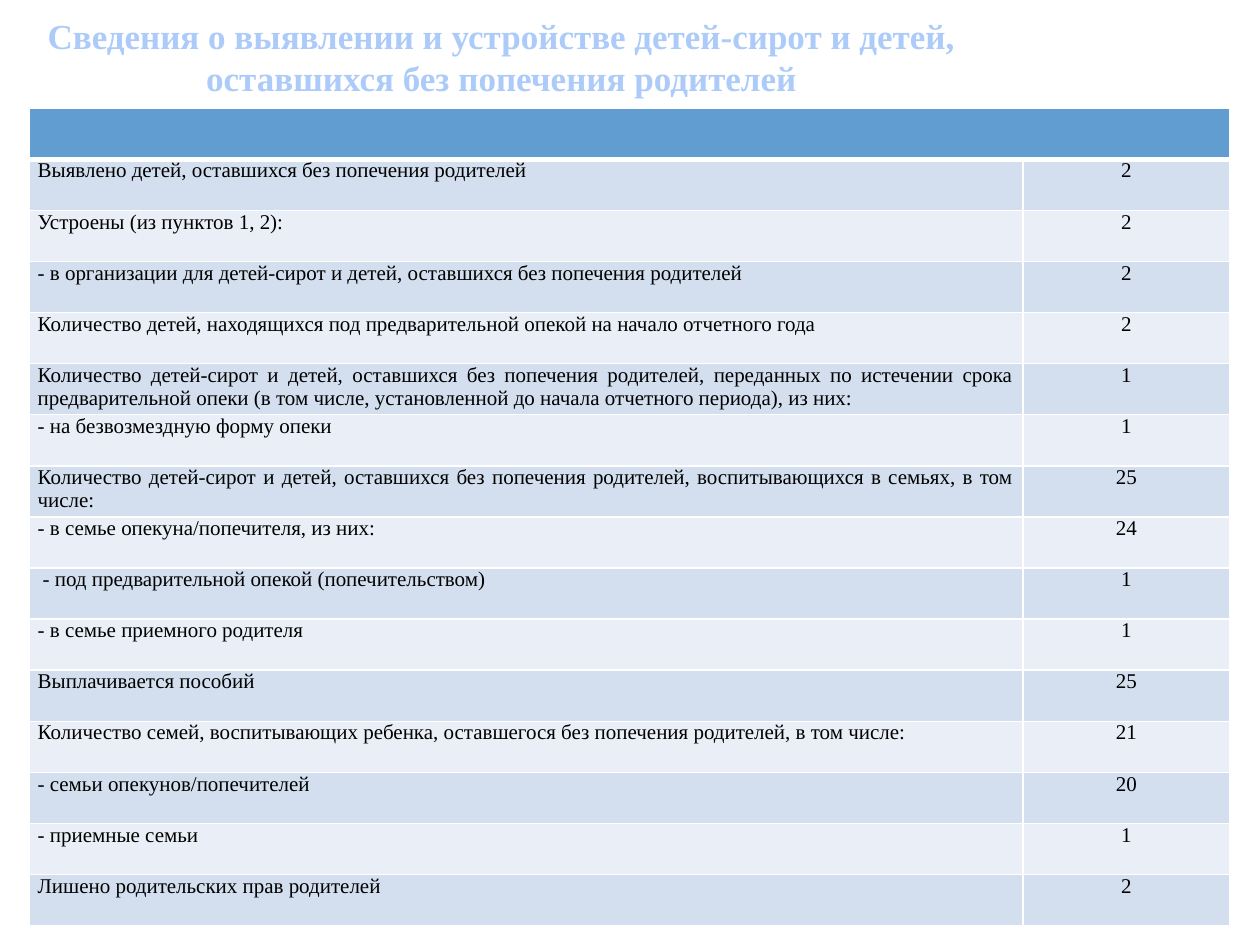
from dataclasses import dataclass

from lxml.etree import SubElement
from pptx import Presentation
from pptx.dml.color import RGBColor
from pptx.enum.text import MSO_ANCHOR, MSO_AUTO_SIZE, PP_ALIGN
from pptx.oxml.ns import qn
from pptx.util import Cm, Pt


@dataclass(frozen=True)
class Theme:
    font: str = "Times New Roman"
    title_size: float = 20
    body_size: float = 12
    title: str = "ACCBF9"
    text: str = "000000"
    header: str = "629DD1"
    bands: tuple = ("D3DFEE", "EAEFF7")
    border: str = "FFFFFF"


THEME = Theme()

TITLE = "Сведения о выявлении и устройстве детей-сирот и детей, оставшихся без попечения родителей"

# Label, number of children or families, extra indent in cm
ROWS = [
    ("Выявлено детей, оставшихся без попечения родителей", 2, 0),
    ("Устроены (из пунктов 1, 2):", 2, 0),
    ("- в организации для детей-сирот и детей, оставшихся без попечения родителей", 2, 0),
    ("Количество детей, находящихся под предварительной опекой на начало отчетного года", 2, 0),
    ("Количество детей-сирот и детей, оставшихся без попечения родителей, переданных "
     "по истечении срока предварительной опеки (в том числе, установленной до начала "
     "отчетного периода), из них:", 1, 0),
    ("- на безвозмездную форму опеки", 1, 0),
    ("Количество детей-сирот и детей, оставшихся без попечения родителей, "
     "воспитывающихся в семьях, в том числе:", 25, 0),
    ("- в семье опекуна/попечителя, из них:", 24, 0),
    ("- под предварительной опекой (попечительством)", 1, 0.1),
    ("- в семье приемного родителя", 1, 0),
    ("Выплачивается пособий", 25, 0),
    ("Количество семей, воспитывающих ребенка, оставшегося без попечения родителей, "
     "в том числе:", 21, 0),
    ("- семьи опекунов/попечителей", 20, 0),
    ("- приемные семьи", 1, 0),
    ("Лишено родительских прав родителей", 2, 0),
]

COLUMN_WIDTHS = (Cm(20.04), Cm(4.17))
ROW_HEIGHT = Cm(1.03)


def set_attributes(target, values):
    for name, value in values.items():
        setattr(target, name, value)


def write_text(frame, text, size, color, align, bold=False):
    para = frame.paragraphs[0]
    para.alignment = align
    span = para.add_run()
    span.text = text
    set_attributes(span.font, {"name": THEME.font, "size": Pt(size), "bold": bold})
    span.font.color.rgb = RGBColor.from_string(color)


def add_title(page):
    box = page.shapes.title
    set_attributes(box, {"left": Cm(0.51), "top": Cm(0.1),
                         "width": Cm(19.2), "height": Cm(3.71)})
    set_attributes(box.text_frame, {"word_wrap": True, "auto_size": MSO_AUTO_SIZE.NONE,
                                    "vertical_anchor": MSO_ANCHOR.TOP,
                                    "margin_top": Cm(0.2)})
    write_text(box.text_frame, TITLE, THEME.title_size, THEME.title,
               PP_ALIGN.CENTER, bold=True)


def format_cell(cell, fill, top=1, bottom=1):
    # Borders come before the fill in the cell properties
    properties = cell._tc.get_or_add_tcPr()
    for side, width in {"L": 1, "R": 1, "T": top, "B": bottom}.items():
        line = SubElement(properties, qn(f"a:ln{side}"), w=str(Pt(width)))
        solid = SubElement(line, qn("a:solidFill"))
        SubElement(solid, qn("a:srgbClr"), val=THEME.border)
    cell.fill.solid()
    cell.fill.fore_color.rgb = RGBColor.from_string(fill)


def add_summary_table(page):
    frame = page.shapes.add_table(len(ROWS) + 1, len(COLUMN_WIDTHS), Cm(0.58), Cm(2.18),
                                  sum(COLUMN_WIDTHS), ROW_HEIGHT * (len(ROWS) + 1))
    table = frame.table
    table.horz_banding = False
    for column, width in zip(table.columns, COLUMN_WIDTHS):
        column.width = width
    for row in table.rows:
        row.height = ROW_HEIGHT

    # Empty header band across both columns
    for cell in table.rows[0].cells:
        format_cell(cell, THEME.header, bottom=3)
    table.cell(0, 0).merge(table.cell(0, 1))

    # Body rows with alternating fills
    for index, (label, count, indent) in enumerate(ROWS, start=1):
        contents = ((label, PP_ALIGN.JUSTIFY, indent), (str(count), PP_ALIGN.CENTER, 0))
        for cell, (text, align, extra) in zip(table.rows[index].cells, contents):
            set_attributes(cell, {"margin_left": Cm(0.18 + extra), "margin_right": Cm(0.18),
                                  "margin_top": 0, "margin_bottom": 0,
                                  "vertical_anchor": MSO_ANCHOR.TOP})
            format_cell(cell, THEME.bands[(index - 1) % 2], top=3 if index == 1 else 1)
            write_text(cell.text_frame, text, THEME.body_size, THEME.text, align)


def main():
    deck = Presentation()
    set_attributes(deck, {"slide_width": Cm(25.4), "slide_height": Cm(19.05)})
    page = deck.slides.add_slide(deck.slide_layouts[5])
    add_title(page)
    add_summary_table(page)
    deck.save("out.pptx")


if __name__ == "__main__":
    main()
